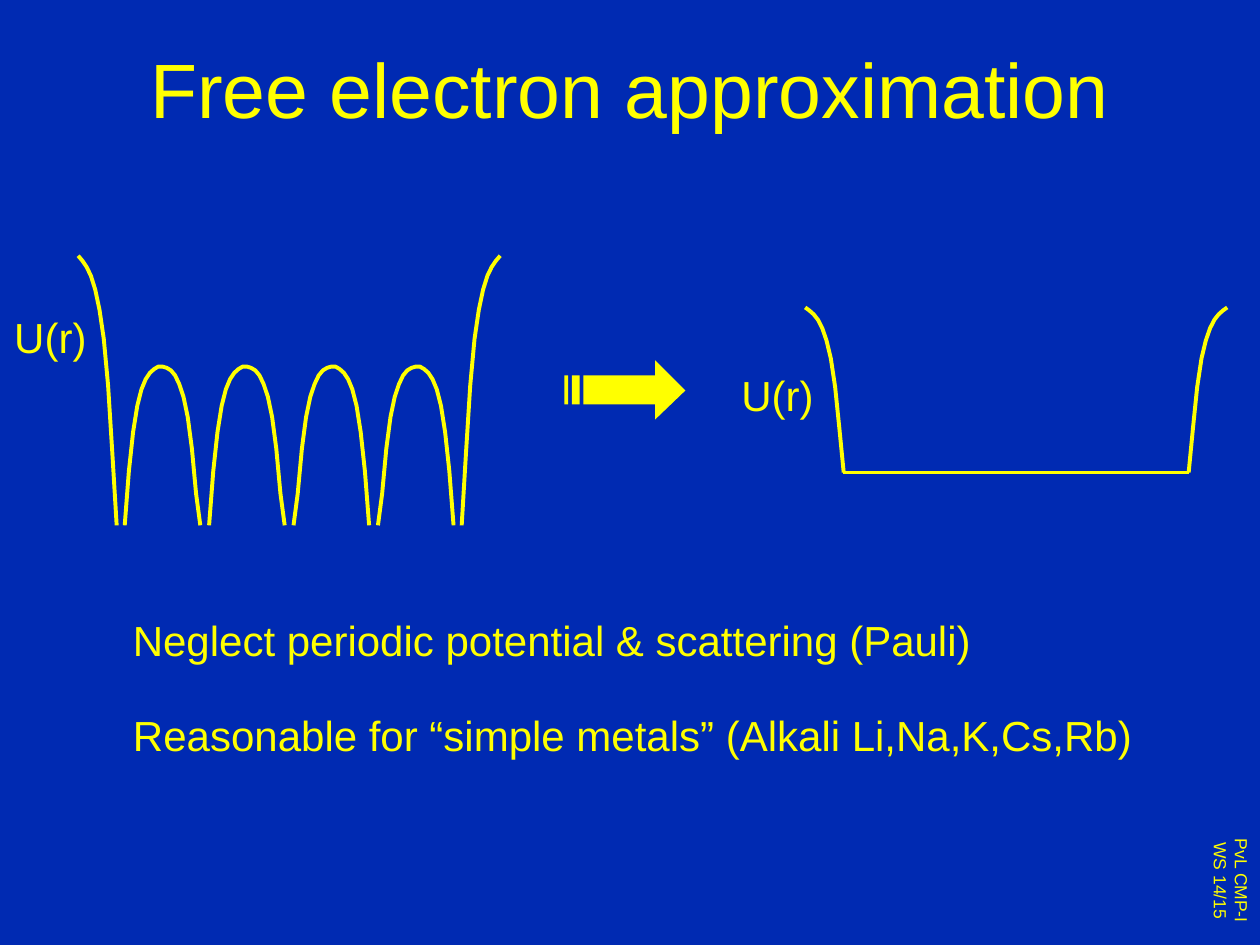
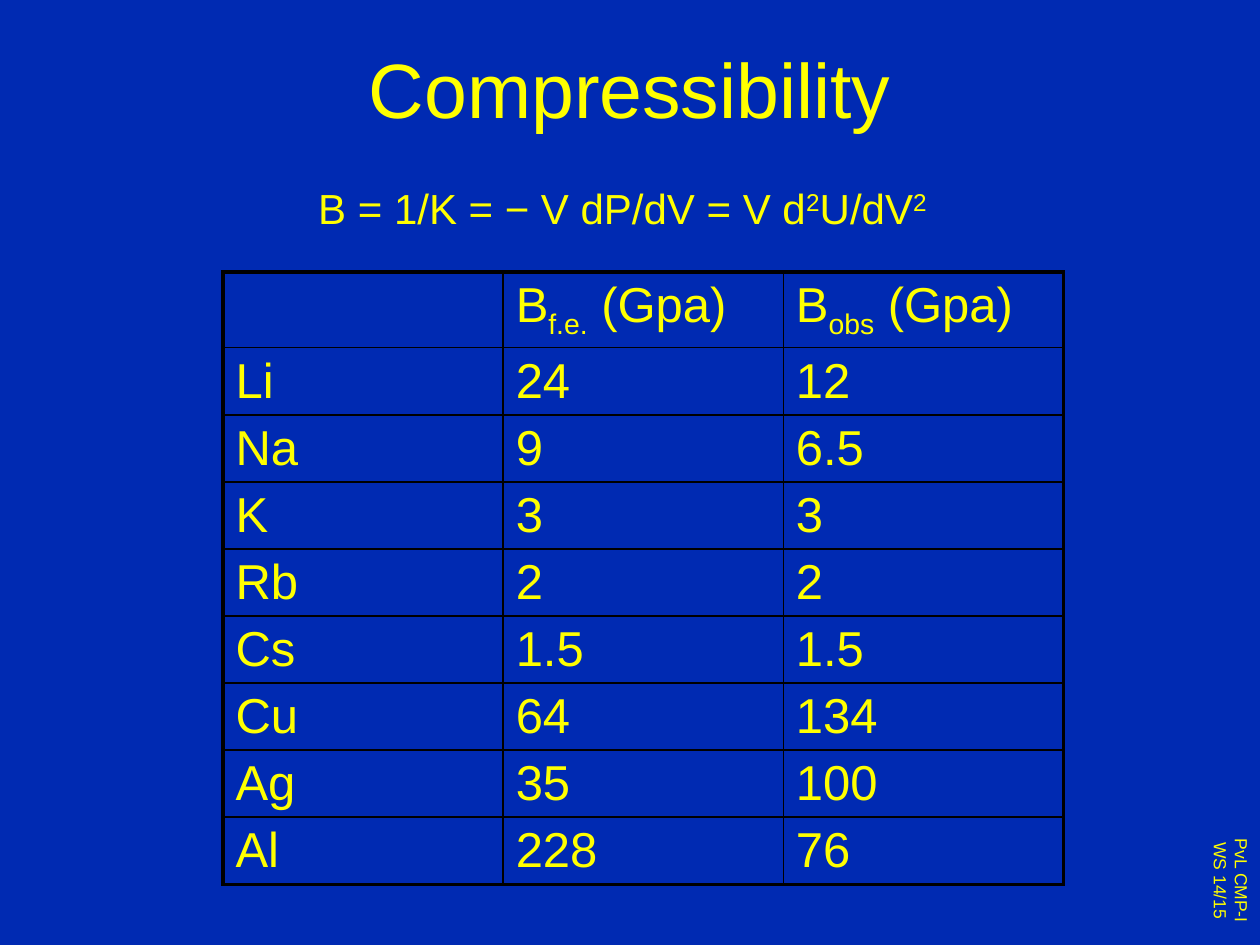
from lxml import etree
from pptx import Presentation
from pptx.dml.color import RGBColor
from pptx.enum.shapes import MSO_CONNECTOR
from pptx.enum.text import MSO_ANCHOR, MSO_AUTO_SIZE, PP_ALIGN
from pptx.oxml.ns import qn
from pptx.util import Inches, Pt

COLORS = {"back": "002AB2", "ink": "FFFF00", "grid": "000000"}
FONT = "Arial"
STEP = 0.034
WALL = [0, 0.04, 0.09, 0.16, 0.27, 0.43, 0.66, 1.03, 1.57, 2.14]
HUMP = [4.17, 3.74, 3.43, 3.22, 3.09, 3.01, 2.96, 2.93, 2.91, 2.91,
        2.92, 2.94, 2.98, 3.05, 3.15, 3.31, 3.56, 3.92, 4.17]
ARROW = [
    [(5.2, 2.86), (5.2, 2.98), (4.63, 2.98), (4.63, 3.21),
     (5.2, 3.21), (5.2, 3.33), (5.44, 3.1)],
    [(4.54, 2.98), (4.54, 3.21), (4.6, 3.21), (4.6, 2.98)],
    [(4.48, 2.98), (4.48, 3.21), (4.51, 3.21), (4.51, 2.98)],
]
METALS = [
    ("Li", "24", "12"), ("Na", "9", "6.5"), ("K", "3", "3"),
    ("Rb", "2", "2"), ("Cs", "1.5", "1.5"), ("Cu", "64", "134"),
    ("Ag", "35", "100"), ("Al", "228", "76"),
]


def color(name):
    return RGBColor.from_string(COLORS[name])


def scale(points):
    return [(Inches(x), Inches(y)) for x, y in points]


def trace(left, heights, step=STEP):
    return [(left + i * step, y) for i, y in enumerate(heights)]


def mirror(points, axis):
    return [(2 * axis - x, y) for x, y in reversed(points)]


class Deck:
    def __init__(self):
        self.file = Presentation()
        self.file.slide_width = Inches(10)
        self.file.slide_height = Inches(7.5)
        fill = self.file.slide_master.background.fill
        fill.solid()
        fill.fore_color.rgb = color("back")
        self.slide = None

    def page(self, title):
        self.slide = self.file.slides.add_slide(self.file.slide_layouts[5])
        self.label(["PvL CMP-I", "WS 14/15"], 9.45, 6.6, 0.54, 0.78, 10, "vert")
        head = self.slide.shapes.title
        head.left, head.top = Inches(0.75), Inches(0.07)
        head.width, head.height = Inches(8.5), Inches(1.25)
        head.text_frame.text = title
        head.text_frame.vertical_anchor = MSO_ANCHOR.MIDDLE
        self.style(head.text_frame, 44, PP_ALIGN.CENTER)

    def style(self, frame, size, align):
        for para in frame.paragraphs:
            para.alignment = align
            for run in para.runs:
                run.font.name = FONT
                run.font.size = Pt(size)
                run.font.color.rgb = color("ink")

    def rich(self, para, parts):
        for text, base in parts:
            run = para.add_run()
            run.text = text
            if base:
                run._r.get_or_add_rPr().set("baseline", str(base * 1000))

    def label(self, lines, left, top, width, height=0.5, size=24, turn=None):
        box = self.slide.shapes.add_textbox(
            Inches(left), Inches(top), Inches(width), Inches(height))
        frame = box.text_frame
        frame.word_wrap = False
        frame.auto_size = MSO_AUTO_SIZE.SHAPE_TO_FIT_TEXT
        if turn:
            frame._txBody.bodyPr.set("vert", turn)
        if isinstance(lines[0], tuple):
            self.rich(frame.paragraphs[0], lines)
        else:
            frame.text = "\n".join(lines)
        self.style(frame, size, PP_ALIGN.CENTER)

    def curve(self, points):
        dots = scale(points)
        path = self.slide.shapes.build_freeform(*dots[0], scale=1.0)
        path.add_line_segments(dots[1:], close=False)
        shape = path.convert_to_shape()
        shape.shadow.inherit = False
        shape.fill.background()
        self.stroke(shape.line)

    def solid(self, parts):
        dots = [scale(part) for part in parts]
        path = self.slide.shapes.build_freeform(*dots[0][0], scale=1.0)
        path.add_line_segments(dots[0][1:], close=True)
        for part in dots[1:]:
            path.move_to(*part[0])
            path.add_line_segments(part[1:], close=True)
        shape = path.convert_to_shape()
        shape.shadow.inherit = False
        shape.fill.solid()
        shape.fill.fore_color.rgb = color("ink")
        shape.line.fill.background()

    def stroke(self, line):
        line.color.rgb = color("ink")
        line.width = Pt(2.25)

    def line(self, start, end):
        (x1, y1), (x2, y2) = scale([start, end])
        link = self.slide.shapes.add_connector(
            MSO_CONNECTOR.STRAIGHT, x1, y1, x2, y2)
        self.stroke(link.line)
        etree.SubElement(link._element.spPr, qn("a:effectLst"))

    def walls(self, left, top, depth, axis):
        side = trace(left, [top + y * depth / WALL[-1] for y in WALL])
        self.curve(side)
        self.curve(mirror(side, axis))

    def border(self, cell, sides):
        props = cell._tc.get_or_add_tcPr()
        for side, outer in sides.items():
            line = etree.SubElement(props, qn("a:ln" + side))
            line.set("w", str(Pt(2.25 if outer else 1)))
            fill = etree.SubElement(line, qn("a:solidFill"))
            etree.SubElement(fill, qn("a:srgbClr")).set("val", COLORS["grid"])

    def table(self, heads, rows, left, top, width, height):
        count, wide = len(rows) + 1, len(heads)
        table = self.slide.shapes.add_table(
            count, wide, Inches(left), Inches(top),
            Inches(width), Inches(height)).table
        table.first_row = table.horz_banding = False
        first = 0.6
        for i, row in enumerate(table.rows):
            row.height = Inches((height - first) / len(rows) if i else first)
            for j, cell in enumerate(row.cells):
                if i:
                    cell.text = rows[i - 1][j]
                else:
                    self.rich(cell.text_frame.paragraphs[0], heads[j])
                self.style(cell.text_frame, 28, PP_ALIGN.LEFT)
                cell.margin_top, cell.margin_bottom = Inches(0.05), Inches(0.03)
                self.border(cell, {"L": j == 0, "R": j == wide - 1,
                                   "T": i == 0, "B": i == count - 1})
                cell.fill.background()


def wells(deck):
    deck.page("Free electron approximation")
    deck.solid(ARROW)
    axis = 2.295
    for left in (0.99, 1.66):
        hump = trace(left, HUMP, 0.6 / (len(HUMP) - 1))
        deck.curve(hump)
        deck.curve(mirror(hump, axis))
    deck.walls(0.62, 2.03, 2.14, axis)
    deck.label(["U(r)"], 0.01, 2.42, 0.78)
    deck.walls(6.39, 2.44, 1.31, 8.065)
    deck.line((6.69, 3.75), (9.44, 3.75))
    deck.label(["U(r)"], 5.78, 2.88, 0.78)
    deck.label(["Neglect periodic potential & scattering (Pauli)"],
               0.95, 4.83, 6.86)
    deck.label(["Reasonable for “simple metals” (Alkali Li,Na,K,Cs,Rb)"],
               0.95, 5.58, 8.14)


def moduli(deck):
    deck.page("Compressibility")
    heads = [[]] + [[("B", 0), (sub, -25), (" (Gpa)", 0)]
                    for sub in ("f.e.", "obs")]
    deck.table(heads, METALS, 1.77, 2.16, 6.67, 4.86)
    deck.label([("B = 1/K = − V dP/dV = V d", 0), ("2", 30),
                ("U/dV", 0), ("2", 30)], 2.4, 1.4, 5.08)


def main():
    deck = Deck()
    wells(deck)
    moduli(deck)
    deck.file.save("out.pptx")


if __name__ == "__main__":
    main()
